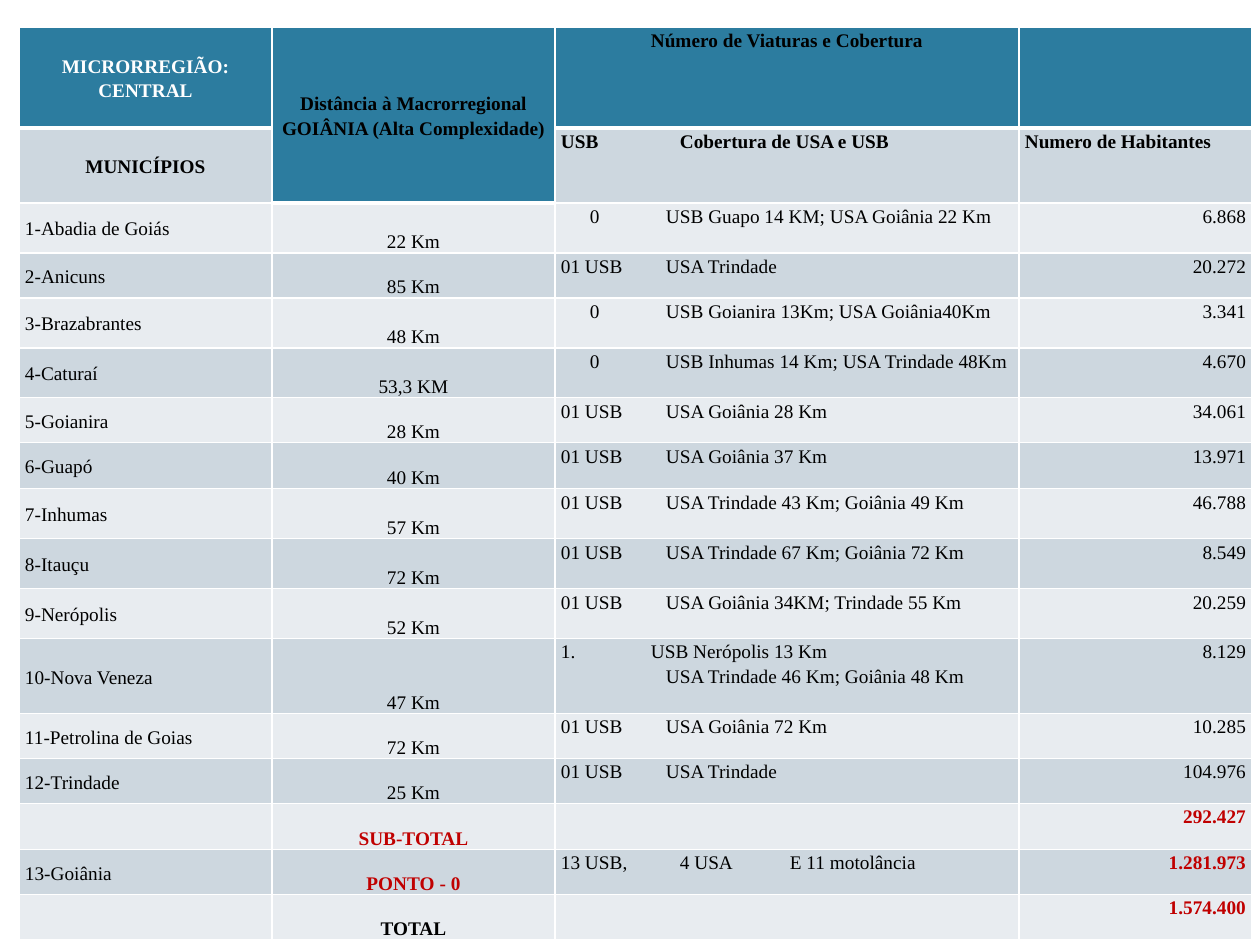
import pptx
import pptx.dml.color
import pptx.enum.text
import pptx.oxml
import pptx.oxml.ns
import pptx.util

PX = 914400 // 126
ALIGN = pptx.enum.text.PP_ALIGN
ANCHOR = pptx.enum.text.MSO_ANCHOR
HEADER, LIGHT, DARK = "2C7C9F", "E8ECF0", "CDD7DF"
WHITE, BLACK, RED = "FFFFFF", "000000", "C00000"


def color(value):
    return pptx.dml.color.RGBColor.from_string(value)


def add_xml(parent, xml):
    """Append an element written in the a: namespace."""
    head, tail = xml.split(" ", 1) if " " in xml.split(">")[0] else xml.split(">", 1)
    joint = " " if " " in xml.split(">")[0] else ">"
    namespace = pptx.oxml.ns.nsdecls("a")
    parent.append(pptx.oxml.parse_xml(f"{head} {namespace}{joint}{tail}"))


# Municipality, distance, vehicles and coverage, inhabitants
rows = [
    ("MICRORREGIÃO: CENTRAL",
     "Distância à Macrorregional GOIÂNIA (Alta Complexidade)",
     "Número de Viaturas e Cobertura", ""),
    ("MUNICÍPIOS", "", "USB\tCobertura de USA e USB", "Numero de Habitantes"),
    ("1-Abadia de Goiás", "22 Km", "\t0\tUSB Guapo 14 KM; USA Goiânia 22 Km", "6.868"),
    ("2-Anicuns", "85 Km", "01 USB\tUSA Trindade", "20.272"),
    ("3-Brazabrantes", "48 Km", "\t0\tUSB Goianira 13Km; USA Goiânia40Km", "3.341"),
    ("4-Caturaí", "53,3 KM", "\t0\tUSB Inhumas 14 Km; USA Trindade 48Km", "4.670"),
    ("5-Goianira", "28 Km", "01 USB\tUSA Goiânia 28 Km", "34.061"),
    ("6-Guapó", "40 Km", "01 USB\tUSA Goiânia 37 Km", "13.971"),
    ("7-Inhumas", "57 Km", "01 USB\tUSA Trindade 43 Km; Goiânia 49 Km", "46.788"),
    ("8-Itauçu", "72 Km", "01 USB\tUSA Trindade 67 Km; Goiânia 72 Km", "8.549"),
    ("9-Nerópolis", "52 Km", "01 USB\tUSA Goiânia 34KM; Trindade 55 Km", "20.259"),
    ("10-Nova Veneza", "47 Km",
     "USB Nerópolis 13 Km\nUSA Trindade 46 Km; Goiânia 48 Km", "8.129"),
    ("11-Petrolina de Goias", "72 Km", "01 USB\tUSA Goiânia 72 Km", "10.285"),
    ("12-Trindade", "25 Km", "01 USB\tUSA Trindade", "104.976"),
    ("", "SUB-TOTAL", "", "292.427"),
    ("13-Goiânia", "PONTO - 0", "13 USB,\t4 USA\tE 11 motolância", "1.281.973"),
    ("", "TOTAL", "", "1.574.400"),
]
widths = [253, 283, 464, 233]
heights = [101, 75, 50, 45, 50, 50, 45, 46, 50, 50, 50, 75, 45, 45, 46, 45, 45]
aligns = [ALIGN.LEFT, ALIGN.CENTER, ALIGN.LEFT, ALIGN.RIGHT]
anchors = [ANCHOR.MIDDLE, ANCHOR.BOTTOM, ANCHOR.TOP, ANCHOR.TOP]
SUBTOTAL, GOIANIA, TOTAL = 14, 15, 16
NUMBERED = 11

deck = pptx.Presentation()
deck.slide_width, deck.slide_height = 1260 * PX, 945 * PX
page = deck.slides.add_slide(deck.slide_layouts[6])
table = page.shapes.add_table(
    len(rows), len(widths), 19 * PX, 27 * PX, sum(widths) * PX, sum(heights) * PX
).table
table.first_row = table.horz_banding = False
for column, width in zip(table.columns, widths):
    column.width = width * PX
for row, height in zip(table.rows, heights):
    row.height = height * PX
table.cell(0, 1).merge(table.cell(1, 1))

for r, texts in enumerate(rows):
    for c, text in enumerate(texts):
        cell = table.cell(r, c)
        distance_header = r < 2 and c == 1
        cell_format = {
            "margin_left": 6 * PX, "margin_right": 6 * PX,
            "margin_top": 0, "margin_bottom": 0,
            "vertical_anchor": ANCHOR.MIDDLE if distance_header else anchors[c],
        }
        for name, value in cell_format.items():
            setattr(cell, name, value)

        for side in "LRTB":
            thick = side == "B" and (r == 0 or distance_header)
            add_xml(cell._tc.get_or_add_tcPr(),
                    f'<a:ln{side} w="{38100 if thick else 12700}"><a:solidFill>'
                    f'<a:srgbClr val="{WHITE}"/></a:solidFill></a:ln{side}>')
        cell.fill.solid()
        band = LIGHT if r % 2 == 0 else DARK
        cell.fill.fore_color.rgb = color(HEADER if r == 0 or distance_header else band)
        if not text:
            continue

        align = aligns[c]
        if r == 0 or (r == 1 and c == 0):
            align = ALIGN.CENTER
        elif r == 1:
            align = ALIGN.LEFT
        total_cell = r in (SUBTOTAL, GOIANIA, TOTAL) and c in (1, 3)
        ink = BLACK
        if r == 0 and c == 0:
            ink = WHITE
        elif total_cell and (r, c) != (TOTAL, 1):
            ink = RED
        tabs = {1: [119], GOIANIA: [119, 229]}.get(r, [105])
        if text.startswith("\t"):
            tabs = [29, 105]

        lines = text.split("\n")
        for i, line in enumerate(lines):
            paragraphs = cell.text_frame.paragraphs
            para = paragraphs[0] if i == 0 else cell.text_frame.add_paragraph()
            last = i == len(lines) - 1
            para_format = {"alignment": align, "line_spacing": 1.15,
                           "space_after": pptx.util.Pt(10 if last else 0)}
            for name, value in para_format.items():
                setattr(para, name, value)
            span = para.add_run()
            span.text = line
            span_format = {"name": "Times New Roman", "size": pptx.util.Pt(11),
                           "bold": r < 2 or total_cell}
            for name, value in span_format.items():
                setattr(span.font, name, value)
            span.font.color.rgb = color(ink)

            properties = para._p.get_or_add_pPr()
            if "\t" in line:
                stops = "".join(f'<a:tab pos="{tab * PX}" algn="l"/>' for tab in tabs)
                add_xml(properties, f"<a:tabLst>{stops}</a:tabLst>")
            if r == NUMBERED and c == 2:
                properties.set("marL", str((105 if last else 90) * PX))
                properties.set("indent", str(0 if last else -90 * PX))
                if not last:
                    add_xml(properties, '<a:buAutoNum type="arabicPeriod"/>')

deck.save("out.pptx")
